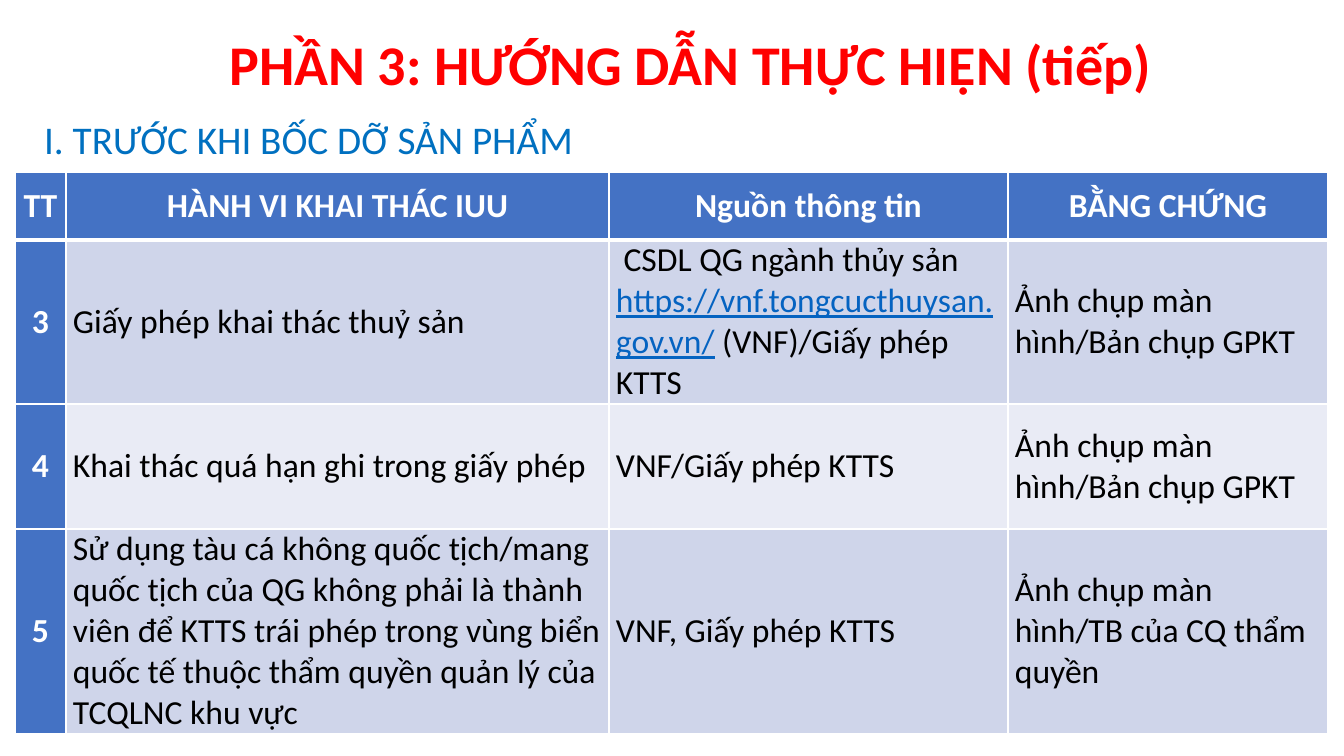
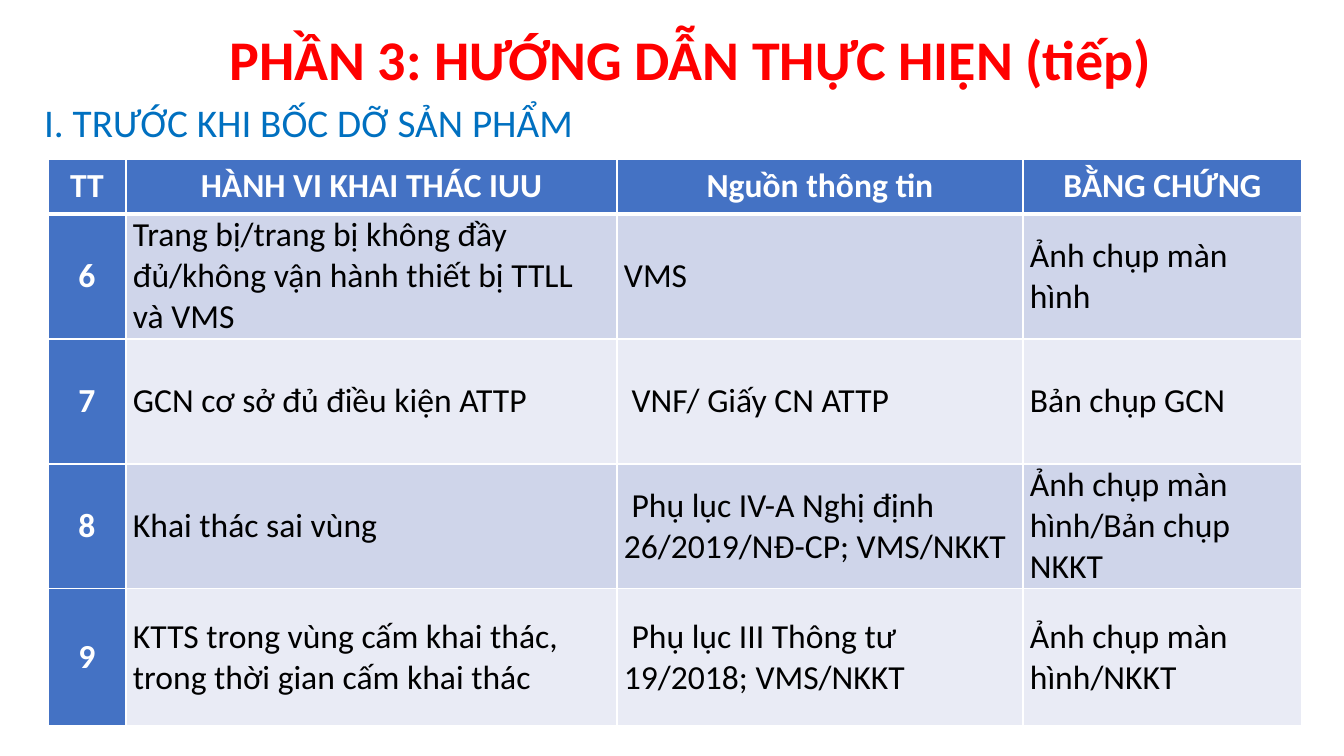
from lxml import etree
from pptx import Presentation
from pptx import util as u
from pptx.dml.color import RGBColor
from pptx.enum import text
from pptx.oxml.ns import qn

EMU_PER_PX = 12192000 / 1344
COLORS = {
    "white": "FFFFFF", "black": "000000", "red": "FF0000", "blue": "0070C0",
    "link": "0563C1", "header": "4472C4", "odd": "CFD5EA", "even": "E9EBF5",
}
FONT = "Calibri"
TITLE = "PHẦN 3: HƯỚNG DẪN THỰC HIỆN (tiếp)"
SECTION = "I. TRƯỚC KHI BỐC DỠ SẢN PHẨM"
HEADINGS = ["TT", "HÀNH VI KHAI THÁC IUU", "Nguồn thông tin", "BẰNG CHỨNG"]

TITLE_STYLE = {"size": 40, "color": "red", "bold": True}
SECTION_STYLE = {"size": 28, "color": "blue"}
HEAD_STYLE = {"size": 24, "color": "white", "bold": True}
CELL_STYLE = {"size": 24, "color": "black", "bold": False}
LINK_STYLE = CELL_STYLE | {"color": "link", "underline": True}

SLIDES = [
    {
        "title_top": 19, "section_top": 116, "table_at": (15, 172),
        "columns": [51, 543, 399, 320], "heights": [68, 164, 125, 205],
        "rows": [
            ["3", "Giấy phép khai thác thuỷ sản",
             [(" CSDL QG ngành thủy sản ", CELL_STYLE),
              ("https://vnf.tongcucthuysan.\vgov.vn/", LINK_STYLE),
              (" (VNF)/Giấy phép KTTS", CELL_STYLE)],
             "Ảnh chụp màn hình/Bản chụp GPKT"],
            ["4", "Khai thác quá hạn ghi trong giấy phép",
             "VNF/Giấy phép KTTS", "Ảnh chụp màn hình/Bản chụp GPKT"],
            ["5", "Sử dụng tàu cá không quốc tịch/mang quốc tịch của QG không "
                  "phải là thành viên để KTTS trái phép trong vùng biển quốc tế "
                  "thuộc thẩm quyền quản lý của TCQLNC khu vực",
             "VNF, Giấy phép KTTS ", "Ảnh chụp màn hình/TB của CQ thẩm quyền"],
        ],
    },
    {
        "title_top": 14, "section_top": 99, "table_at": (48, 159),
        "columns": [78, 491, 406, 279], "heights": [55, 125, 125, 125, 137],
        "rows": [
            ["6", "Trang bị/trang bị không đầy đủ/không vận hành thiết bị TTLL và VMS",
             "VMS", "Ảnh chụp màn hình"],
            ["7", "GCN cơ sở đủ điều kiện ATTP", " VNF/ Giấy CN ATTP ", "Bản chụp GCN"],
            ["8", "Khai thác sai vùng",
             " Phụ lục IV-A Nghị định 26/2019/NĐ-CP; VMS/NKKT",
             "Ảnh chụp màn hình/Bản chụp NKKT"],
            ["9", "KTTS trong vùng cấm khai thác, trong thời gian cấm khai thác",
             " Phụ lục III Thông tư 19/2018; VMS/NKKT", "Ảnh chụp màn hình/NKKT"],
        ],
    },
]


def px(length):
    return u.Emu(round(length * EMU_PER_PX))


def rgb(name):
    return RGBColor.from_string(COLORS[name])


def write_para(para, spans, **layout):
    """Fill a paragraph with (text, style) spans."""
    for name, value in layout.items():
        setattr(para, name, value)
    for words, style in spans:
        # A vertical tab marks a line break inside a span.
        for index, line in enumerate(words.split("\v")):
            if index:
                para.add_line_break()
            span = para.add_run()
            span.text = line
            font_values = style | {"name": FONT, "size": u.Pt(style["size"])}
            span.font.color.rgb = rgb(font_values.pop("color"))
            for name, value in font_values.items():
                setattr(span.font, name, value)


def place_heading(box, area, words, style, anchor, **layout):
    """Move a placeholder to its area and write one line in it."""
    box.left, box.top, box.width, box.height = map(px, area)
    frame = box.text_frame
    frame.auto_size = text.MSO_AUTO_SIZE.NONE
    frame.word_wrap = True
    frame.vertical_anchor = anchor
    para = frame.paragraphs[0]
    write_para(para, [(words, style)], line_spacing=0.9, **layout)
    return para


def remove_bullet(para):
    properties = para._p.get_or_add_pPr()
    properties.set("marL", "0")
    properties.set("indent", "0")
    etree.SubElement(properties, qn("a:buNone"))


def draw_borders(cell, widths):
    properties = cell._tc.get_or_add_tcPr()
    for side, width in widths.items():
        line = etree.SubElement(properties, qn("a:ln" + side), w=str(u.Pt(width)))
        fill = etree.SubElement(line, qn("a:solidFill"))
        etree.SubElement(fill, qn("a:srgbClr"), val=COLORS["white"])


def format_cell(cell, content, row, column):
    is_head = row == 0 or column == 0
    draw_borders(cell, {"L": 1, "R": 1, "T": 3 if row == 1 else 1,
                        "B": 3 if row == 0 else 1})
    cell.fill.solid()
    cell.fill.fore_color.rgb = rgb("header" if is_head else "odd" if row % 2 else "even")
    side = px(6 if row == 0 else 7)
    values = {"margin_left": side, "margin_right": side, "margin_top": 0,
              "margin_bottom": 0, "vertical_anchor": text.MSO_ANCHOR.MIDDLE}
    for name, value in values.items():
        setattr(cell, name, value)
    if isinstance(content, str):
        content = [(content, HEAD_STYLE if is_head else CELL_STYLE)]
    align = text.PP_ALIGN.CENTER if is_head else text.PP_ALIGN.LEFT
    write_para(cell.text_frame.paragraphs[0], content,
               alignment=align, space_before=u.Pt(6))


def add_violation_table(page, corner, columns, heights, rows):
    rows = [HEADINGS] + rows
    area = (*corner, sum(columns), sum(heights))
    table = page.shapes.add_table(len(rows), len(columns), *map(px, area)).table
    table.first_col = True
    table.horz_banding = False
    for column, width in zip(table.columns, columns):
        column.width = px(width)
    for row, height in zip(table.rows, heights):
        row.height = px(height)
    for row, contents in enumerate(rows):
        for column, content in enumerate(contents):
            format_cell(table.cell(row, column), content, row, column)


def add_page(deck, content):
    page = deck.slides.add_slide(deck.slide_layouts[1])
    title, section = page.placeholders
    place_heading(title, (111, content["title_top"], 1159, 97), TITLE, TITLE_STYLE,
                  text.MSO_ANCHOR.MIDDLE, alignment=text.PP_ALIGN.CENTER)
    remove_bullet(place_heading(section, (34, content["section_top"], 799, 67),
                                SECTION, SECTION_STYLE, text.MSO_ANCHOR.TOP,
                                space_before=u.Pt(10)))
    add_violation_table(page, content["table_at"], content["columns"],
                        content["heights"], content["rows"])


def main():
    deck = Presentation()
    deck.slide_width, deck.slide_height = px(1344), px(756)
    for content in SLIDES:
        add_page(deck, content)
    deck.save("out.pptx")


if __name__ == "__main__":
    main()
